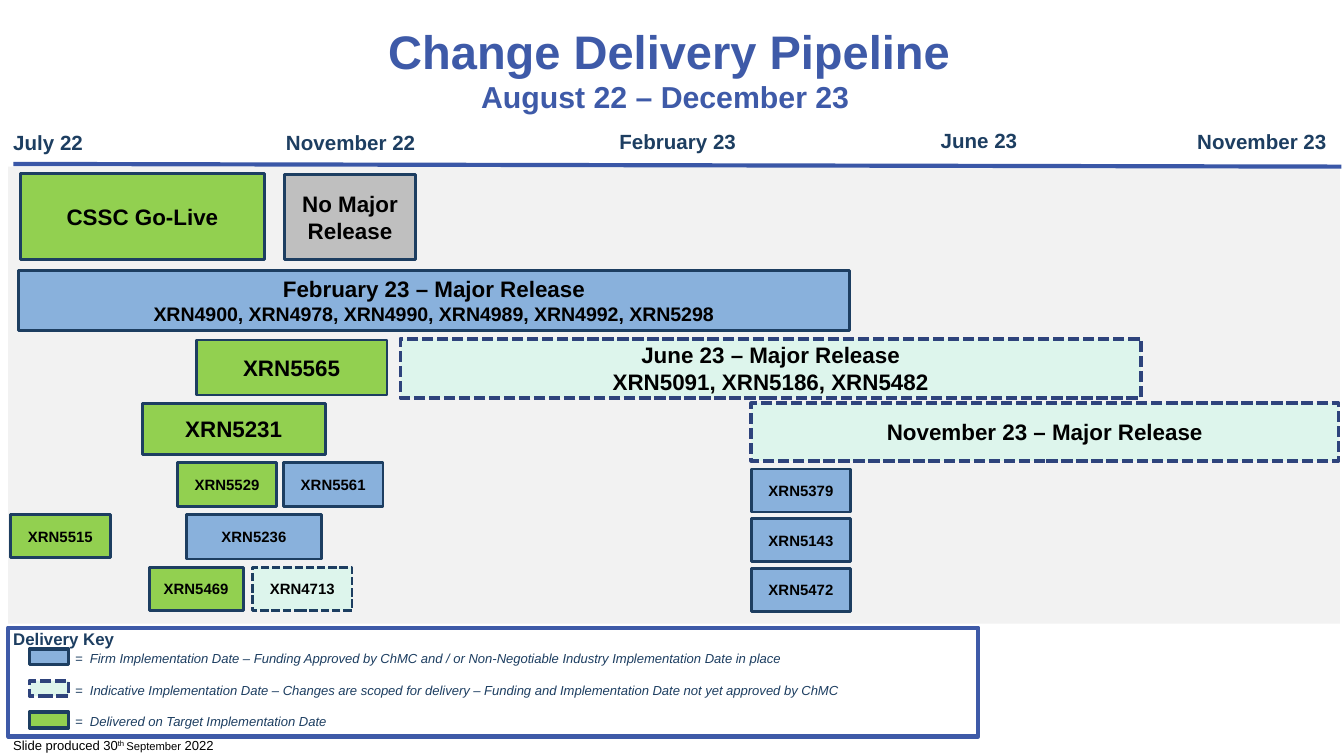
import pptx
import pptx.dml.color
import pptx.enum.dml
import pptx.enum.shapes
import pptx.enum.text
import pptx.oxml
import pptx.oxml.ns
import pptx.util
from lxml import etree

RGB = pptx.dml.color.RGBColor
Pt = pptx.util.Pt
ALIGN = pptx.enum.text.PP_ALIGN
ANCHOR = pptx.enum.text.MSO_ANCHOR
RECTANGLE = pptx.enum.shapes.MSO_SHAPE.RECTANGLE

BLACK = RGB(0x00, 0x00, 0x00)
NAVY = RGB(0x1D, 0x3E, 0x61)
INDIGO = RGB(0x2E, 0x43, 0x7C)
TITLE_BLUE = RGB(0x3E, 0x5A, 0xA8)
AXIS_BLUE = RGB(0x3A, 0x57, 0xA7)
PANEL_GREY = RGB(0xF2, 0xF2, 0xF2)
GREY = RGB(0xBF, 0xBF, 0xBF)
GREEN = RGB(0x92, 0xD0, 0x50)
BLUE = RGB(0x89, 0xB1, 0xDC)
MINT = RGB(0xDD, 0xF5, 0xEC)

# Kind of release: fill, outline colour, outline points, dashed
DELIVERED = (GREEN, NAVY, 1.5, False)
FIRM = (BLUE, NAVY, 1.5, False)
INDICATIVE = (MINT, INDIGO, 2, True)
INDICATIVE_MINOR = (MINT, NAVY, 1.5, True)
NO_RELEASE = (GREY, NAVY, 1.5, False)

deck = pptx.Presentation()
deck.slide_width = pptx.util.Inches(10)
deck.slide_height = pptx.util.Inches(5.625)
slide = deck.slides.add_slide(deck.slide_layouts[6])
shapes = slide.shapes
UNIT = deck.slide_width / 100  # square grid, 100 columns across


def add_box(place, kind):
    """Draw a rectangle at (column, row, columns, rows) in the style of kind."""
    fill, edge, weight, dashed = kind
    box = shapes.add_shape(RECTANGLE, *(round(n * UNIT) for n in place))
    box.shadow.inherit = False
    if fill is None:
        box.fill.background()
    else:
        box.fill.solid()
        box.fill.fore_color.rgb = fill
    if edge is None:
        box.line.fill.background()
    else:
        box.line.color.rgb = edge
        box.line.width = Pt(weight)
    if dashed:
        box.line.dash_style = pptx.enum.dml.MSO_LINE.SQUARE_DOT
    return box


def add_run(paragraph, text, size, color, bold=False, italic=False):
    run = paragraph.add_run()
    run.text = text
    run.font.name = "Arial"
    run.font.size = Pt(size)
    run.font.color.rgb = color
    run.font.bold = bold
    run.font.italic = italic
    return run


# Heading
heading = shapes.add_textbox(*(round(n * UNIT) for n in (-0.2, 1.6, 100, 7))).text_frame
heading.word_wrap = True
heading.vertical_anchor = ANCHOR.MIDDLE
heading_line = heading.paragraphs[0]
heading_line.alignment = ALIGN.CENTER
add_run(heading_line, "Change Delivery Pipeline", 25.2, TITLE_BLUE, bold=True)
heading_line.add_line_break()
add_run(heading_line, "August 22 – December 23 ", 16.2, TITLE_BLUE, bold=True)

# Timeline
add_box((0.6, 12.4, 99.1, 34), (PANEL_GREY, None, 0, False))
axis = shapes.add_connector(
    pptx.enum.shapes.MSO_CONNECTOR.STRAIGHT,
    *(round(n * UNIT) for n in (1, 12.2, 99.8, 12.4)))
axis.line.color.rgb = AXIS_BLUE
axis.line.width = Pt(2.25)
etree.SubElement(axis._element.spPr, pptx.oxml.ns.qn("a:effectLst"))

captions = [
    ("July 22", (0, 9.2, 7.2, 2.9), 11, NAVY),
    ("November 22", (20.3, 9.2, 11.7, 2.9), 11, NAVY),
    ("February 23", (45.1, 9.1, 10.8, 2.9), 11, NAVY),
    ("June 23", (69, 9, 7.8, 2.9), 11, NAVY),
    ("November 23", (88.1, 9.1, 11.7, 2.9), 11, NAVY),
    ("Delivery Key", (0, 46.3, 9.6, 2.9), 9, NAVY),
]
for text, place, size, color in captions:
    caption = shapes.add_textbox(*(round(n * UNIT) for n in place)).text_frame
    caption.word_wrap = False
    add_run(caption.paragraphs[0], text, size, color, bold=True)

# Releases: place, kind, lines of (text, points)
releases = [
    ((1.5, 12.9, 18.2, 6.4), DELIVERED, [("CSSC Go-Live", 12)]),
    ((21.2, 13, 9.7, 6.3), NO_RELEASE, [("No Major Release", 12)]),
    ((1.4, 20.1, 61.8, 4.5), FIRM, [
        ("February 23 – Major Release", 12),
        ("XRN4900, XRN4978, XRN4990, XRN4989, XRN4992, XRN5298", 10.5)]),
    ((14.6, 25.3, 14.2, 4.1), DELIVERED, [("XRN5565", 12)]),
    ((29.8, 25.2, 55.1, 4.4), INDICATIVE, [
        ("June 23 – Major Release", 12),
        ("XRN5091, XRN5186, XRN5482", 12)]),
    ((10.6, 30, 13.6, 3.8), DELIVERED, [("XRN5231", 12)]),
    ((55.9, 30, 43.7, 4.3), INDICATIVE, [("November 23 – Major Release", 12)]),
    ((13.2, 34.4, 7.4, 3.3), DELIVERED, [("XRN5529", 8)]),
    ((21.1, 34.4, 7.4, 3.3), FIRM, [("XRN5561", 8)]),
    ((0.8, 38.3, 7.4, 3.2), DELIVERED, [("XRN5515", 8)]),
    ((13.9, 38.3, 10, 3.3), FIRM, [("XRN5236", 8)]),
    ((11.1, 42.2, 7, 3.2), DELIVERED, [("XRN5469", 8)]),
    ((18.8, 42.2, 7.4, 3.2), INDICATIVE_MINOR, [("XRN4713", 8)]),
]
for row, change in enumerate(["XRN5379", "XRN5143", "XRN5472"]):
    releases.append(((55.9, 34.9 + 3.7 * row, 7.4, 3.2), FIRM, [(change, 8)]))

for place, kind, lines in releases:
    release = add_box(place, kind).text_frame
    release.word_wrap = True
    release.vertical_anchor = ANCHOR.MIDDLE
    for index, (text, size) in enumerate(lines):
        line = release.add_paragraph() if index else release.paragraphs[0]
        line.alignment = ALIGN.CENTER
        add_run(line, text, size, BLACK, bold=True)

# Delivery key
add_box((0.6, 46.7, 72.2, 8.1), (None, TITLE_BLUE, 2.25, False))
meanings = [
    (BLUE, NAVY, False, "Firm Implementation Date – Funding Approved by ChMC and / or "
     "Non-Negotiable Industry Implementation Date in place"),
    (MINT, INDIGO, True, "Indicative Implementation Date – Changes are scoped for delivery – "
     "Funding and Implementation Date not yet approved by ChMC"),
    (GREEN, NAVY, False, "Delivered on Target Implementation Date"),
]
key = shapes.add_textbox(*(round(n * UNIT) for n in (5.6, 48.4, 66, 6))).text_frame
key.word_wrap = True
key.margin_left = key.margin_right = key.margin_top = key.margin_bottom = 0
for index, (fill, edge, dashed, meaning) in enumerate(meanings):
    add_box((2.2, 48.3 + 2.35 * index, 2.9, 1.15), (fill, edge, 2, dashed))
    entry = key.add_paragraph() if index else key.paragraphs[0]
    hang = round(1.1 * UNIT)
    properties = entry._p.get_or_add_pPr()
    properties.set("marL", str(hang))
    properties.set("indent", str(-hang))
    tabs = etree.SubElement(properties, pptx.oxml.ns.qn("a:tabLst"))
    etree.SubElement(tabs, pptx.oxml.ns.qn("a:tab"), pos=str(hang), algn="l")
    if index:
        entry.space_before = Pt(8.5)
    add_run(entry, "=\t" + meaning, 7, NAVY, italic=True)

# Production date
footnote = shapes.add_textbox(*(round(n * UNIT) for n in (0, 54.4, 17.3, 2.2))).text_frame
footnote.word_wrap = False
produced = footnote.paragraphs[0]
add_run(produced, "Slide produced 30", 7, BLACK)
ordinal = add_run(produced, "th ", 7, BLACK)
ordinal._r.get_or_add_rPr().set("baseline", "30000")
add_run(produced, "September", 6, BLACK)
add_run(produced, " 2022", 7, BLACK)

deck.save("out.pptx")
